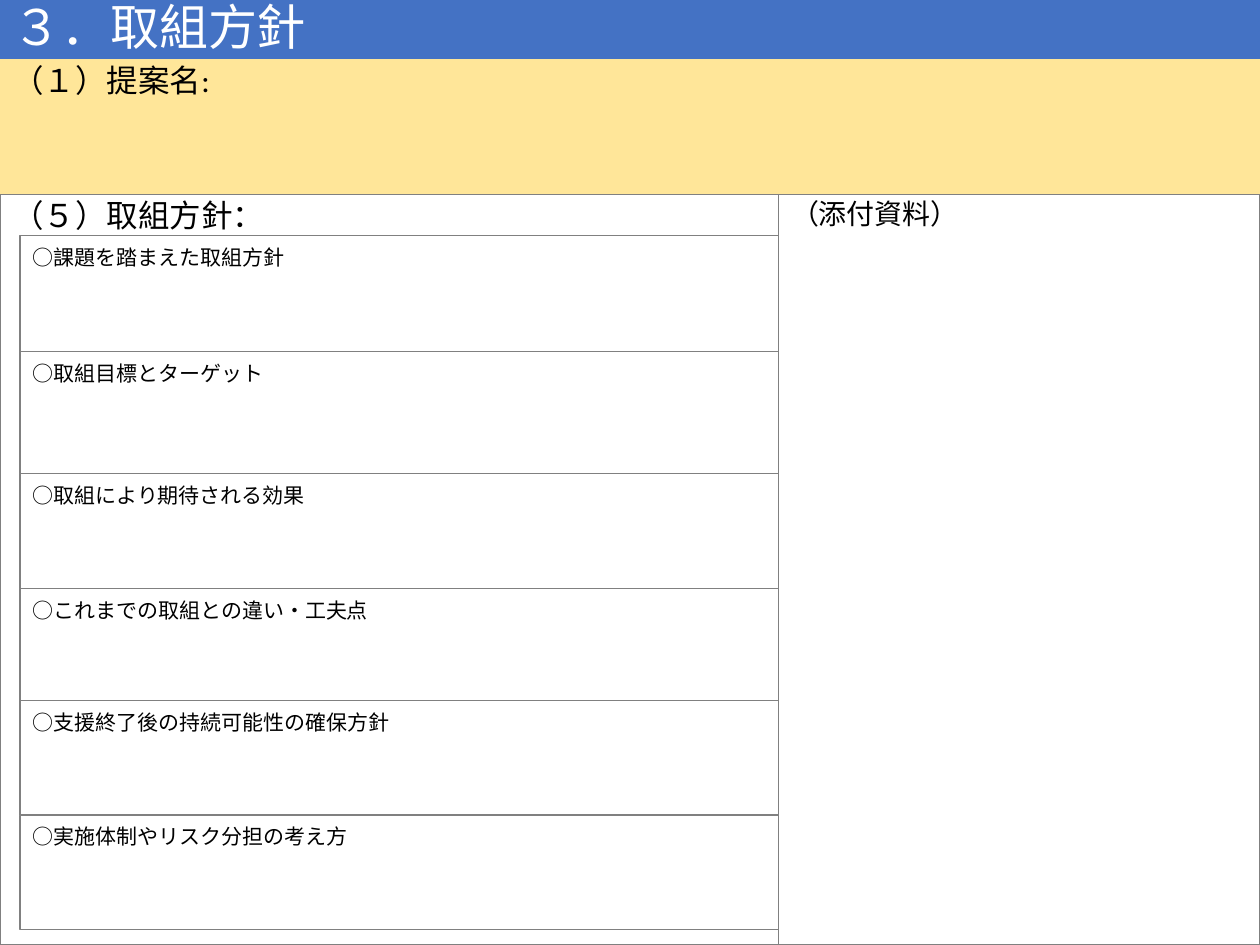
from itertools import accumulate

from pptx import Presentation
from pptx.dml.color import RGBColor
from pptx.enum.shapes import MSO_SHAPE
from pptx.enum.text import MSO_ANCHOR, PP_ALIGN
from pptx.util import Inches, Pt

# Content
TITLE = "３．取組方針"
NAME = "（１）提案名:"
POLICY = "（５）取組方針："
ATTACH = "（添付資料）"
ITEMS = [  # heading, height of its box
    ("○課題を踏まえた取組方針", 0.92),
    ("○取組目標とターゲット", 0.97),
    ("○取組により期待される効果", 0.91),
    ("○これまでの取組との違い・工夫点", 0.89),
    ("○支援終了後の持続可能性の確保方針", 0.91),
    ("○実施体制やリスク分担の考え方", 0.91),
]

THEME = {
    "font": "Calibri",
    "blue": "4472C4", "cream": "FFE699", "gray": "808080",
    "white": "FFFFFF", "black": "000000",
    "title": 28, "head": 18, "side": 16, "item": 12,
}

# Layout
WIDTH, HEIGHT = 10, 7.5
BAR, TOP, SPLIT = 0.47, 1.54, 6.18
LEFT, FIRST = 0.16, 1.87


def add_box(slide, text, at, size, fill=None, line=None, color="black",
            space=10, lead=0.9, anchor=MSO_ANCHOR.TOP):
    box = slide.shapes.add_shape(MSO_SHAPE.RECTANGLE, *map(Inches, at))
    box.shadow.inherit = False
    if fill:
        box.fill.solid()
        box.fill.fore_color.rgb = RGBColor.from_string(THEME[fill])
    else:
        box.fill.background()
    if line:
        box.line.color.rgb = RGBColor.from_string(THEME["gray"])
        box.line.width = Pt(line)
    else:
        box.line.fill.background()

    frame = box.text_frame
    frame.text = text
    frame.word_wrap = True
    frame.vertical_anchor = anchor
    para = frame.paragraphs[0]
    para.alignment = PP_ALIGN.LEFT
    para.line_spacing = lead
    para.space_before = Pt(space)
    font = para.runs[0].font
    font.name = THEME["font"]
    font.size = Pt(THEME[size])
    font.color.rgb = RGBColor.from_string(THEME[color])


def main():
    deck = Presentation()
    deck.slide_width, deck.slide_height = Inches(WIDTH), Inches(HEIGHT)
    slide = deck.slides.add_slide(deck.slide_layouts[6])

    # Title bar
    add_box(slide, TITLE, (0, 0, WIDTH, BAR), "title", fill="blue",
            color="white", space=0, anchor=MSO_ANCHOR.MIDDLE)

    # Policy and attachment panels
    add_box(slide, POLICY, (0, TOP, SPLIT, HEIGHT - TOP), "head", line=1)
    add_box(slide, ATTACH, (SPLIT, TOP, WIDTH - SPLIT, HEIGHT - TOP),
            "side", line=0.75)

    # Stacked policy items
    tops = accumulate((high for _, high in ITEMS), initial=FIRST)
    for (text, high), top in zip(ITEMS, tops):
        add_box(slide, text, (LEFT, top, SPLIT - LEFT, high), "item",
                line=0.75, lead=1.1)

    # Proposal name band
    add_box(slide, NAME, (0, BAR, WIDTH, TOP - BAR), "head", fill="cream")

    deck.save("out.pptx")


if __name__ == "__main__":
    main()
